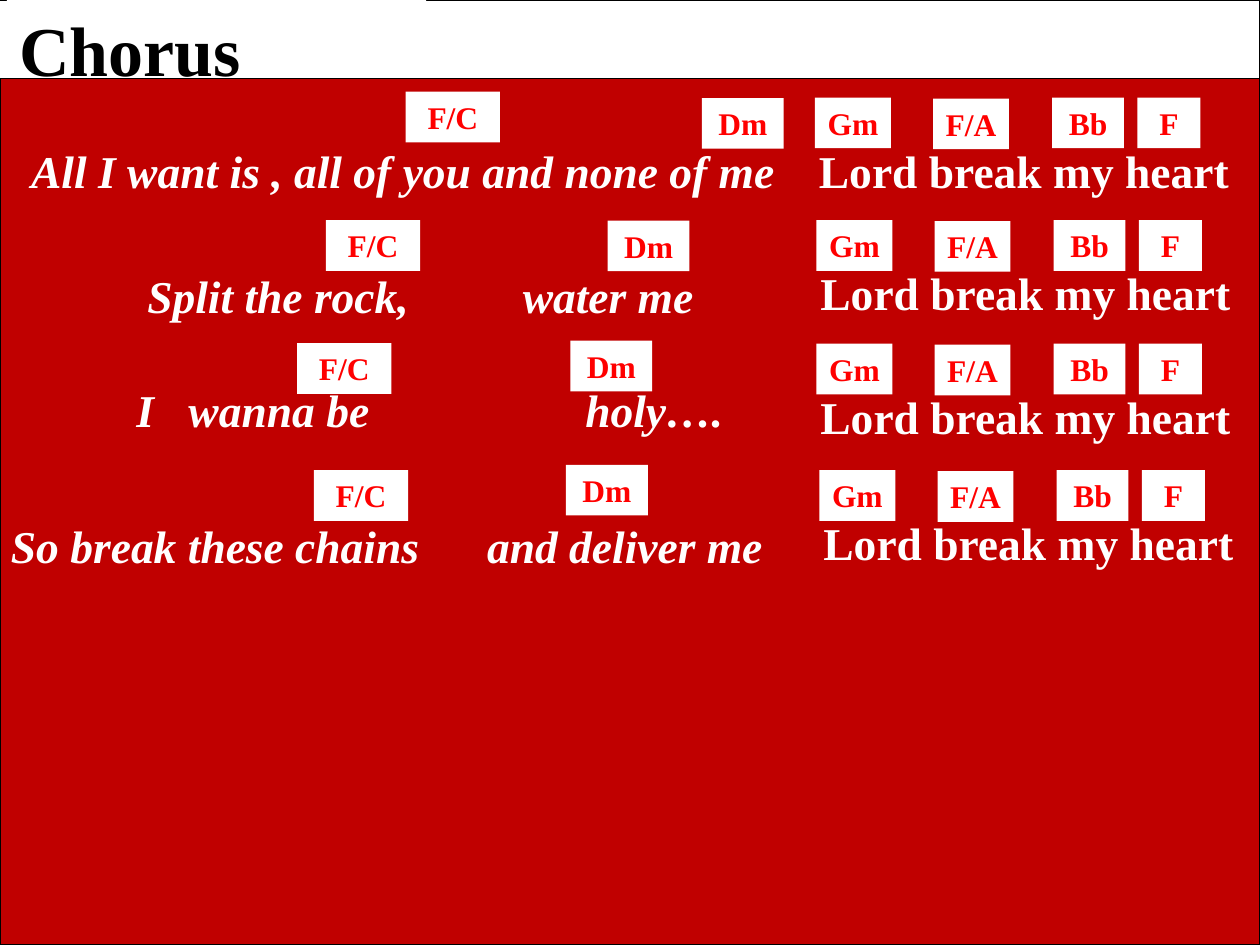
from dataclasses import dataclass

from lxml import etree
from pptx import Presentation, util as u
from pptx.dml.color import RGBColor
from pptx.enum import shapes, text
from pptx.oxml.ns import qn


@dataclass(frozen=True)
class Theme:
    font: str = "Times New Roman"
    black: str = "000000"
    white: str = "FFFFFF"
    panel: str = "C00000"
    chord: str = "FF0000"
    title_size: int = 40
    lyric_size: int = 26
    chord_size: int = 18
    outline: float = 0.75


THEME = Theme()

# All lengths are in centimetres.
WIDTH, HEIGHT = 25.4, 19.05
INSET, CHORD_INSET = 0.25, 0.15
LYRIC_HEIGHT = 1.37
CHORD_HEIGHT = 1.02
CHORD_WIDTHS = {"F/C": 1.9, "Dm": 1.65, "Gm": 1.53, "F/A": 1.53, "Bb": 1.45, "F": 1.27}

TITLE = "Chorus"
REFRAIN = "Lord break my heart"
REFRAIN_WIDTH, REFRAIN_INDENT = 9.58, 0.46
# name, offset from the refrain's left edge, height above its top
REFRAIN_CHORDS = [("Gm", 0.63, 0.78), ("F/A", 3.01, 0.76), ("Bb", 5.41, 0.78), ("F", 7.13, 0.78)]

# phrases of the line, box (left, top, width), indent, tab stops,
# chords (name, left, top), refrain (left, top)
LINES = [
    (["All I want is , all of you and none of me"], (-0.08, 2.76, 16.5), 0.46, [],
     [("F/C", 8.18, 1.85), ("Dm", 14.15, 1.98)], (15.8, 2.75)),
    (["Split the rock,", "water me"], (-0.03, 5.28, 25.5), 2.75, [7.57],
     [("F/C", 6.57, 4.44), ("Dm", 12.25, 4.45)], (15.83, 5.22)),
    (["I", "wanna be", "holy…."], (-0.03, 7.57, 25.5), 2.53, [1.05, 9.05],
     [("F/C", 5.99, 6.92), ("Dm", 11.5, 6.87)], (15.83, 7.71)),
    (["So break these chains", "and deliver me"], (-0.03, 10.31, 25.5), 0, [9.6],
     [("F/C", 6.33, 9.48), ("Dm", 11.41, 9.37)], (15.89, 10.26)),
]


def add_rectangle(slide, box, fill, outlined=False):
    shape = slide.shapes.add_shape(shapes.MSO_SHAPE.RECTANGLE, *map(u.Cm, box))
    shape.shadow.inherit = False
    shape.fill.solid()
    shape.fill.fore_color.rgb = RGBColor.from_string(fill)
    if outlined:
        shape.line.color.rgb = RGBColor.from_string(THEME.black)
        shape.line.width = u.Pt(THEME.outline)
    else:
        shape.line.fill.background()
    return shape


def write(shape, phrases, size, color, italic=False, centered=False,
          left_inset=INSET, right_inset=INSET, tabs=()):
    """Set one bold line in the shape, its phrases parted by tab stops."""
    frame = shape.text_frame
    frame.word_wrap = True
    frame.auto_size = text.MSO_AUTO_SIZE.SHAPE_TO_FIT_TEXT
    frame.vertical_anchor = text.MSO_ANCHOR.TOP
    frame.margin_left, frame.margin_right = u.Cm(left_inset), u.Cm(right_inset)
    paragraph = frame.paragraphs[0]
    paragraph.alignment = text.PP_ALIGN.CENTER if centered else text.PP_ALIGN.LEFT
    properties = paragraph._p.get_or_add_pPr()
    before = etree.SubElement(properties, qn("a:spcBef"))
    etree.SubElement(before, qn("a:spcPct"), val="50000")
    if tabs:
        stops = etree.SubElement(properties, qn("a:tabLst"))
        for position in tabs:
            etree.SubElement(stops, qn("a:tab"), pos=str(u.Cm(position)), algn="l")
    run = paragraph.add_run()
    run.text = "\t".join(phrases)
    font = run.font
    font.name, font.size = THEME.font, u.Pt(size)
    font.bold, font.italic = True, italic
    font.color.rgb = RGBColor.from_string(color)


def add_lyric(slide, phrases, left, top, width, indent, **options):
    box = slide.shapes.add_textbox(*map(u.Cm, (left, top, width, LYRIC_HEIGHT)))
    write(box, phrases, THEME.lyric_size, THEME.white, left_inset=INSET + indent, **options)


def add_chord(slide, name, left, top):
    chord = add_rectangle(slide, (left, top, CHORD_WIDTHS[name], CHORD_HEIGHT), THEME.white)
    write(chord, [name], THEME.chord_size, THEME.chord, centered=True,
          left_inset=CHORD_INSET, right_inset=CHORD_INSET)


def main():
    presentation = Presentation()
    presentation.slide_width, presentation.slide_height = u.Cm(WIDTH), u.Cm(HEIGHT)
    slide = presentation.slides.add_slide(presentation.slide_layouts[6])

    add_rectangle(slide, (-0.02, 0, WIDTH + 0.02, 3.18), THEME.white, outlined=True)
    title = add_rectangle(slide, (0.14, 0, 8.45, 1.96), THEME.white)
    write(title, [TITLE], THEME.title_size, THEME.black)
    add_rectangle(slide, (0.01, 1.58, WIDTH - 0.02, HEIGHT - 1.58), THEME.panel, outlined=True)

    for phrases, box, indent, tabs, chords, (left, top) in LINES:
        add_lyric(slide, phrases, *box, indent, italic=True, tabs=tabs)
        add_lyric(slide, [REFRAIN], left, top, REFRAIN_WIDTH, REFRAIN_INDENT)
        for chord in chords:
            add_chord(slide, *chord)
        for name, offset, rise in REFRAIN_CHORDS:
            add_chord(slide, name, left + offset, top - rise)

    presentation.save("out.pptx")


if __name__ == "__main__":
    main()
